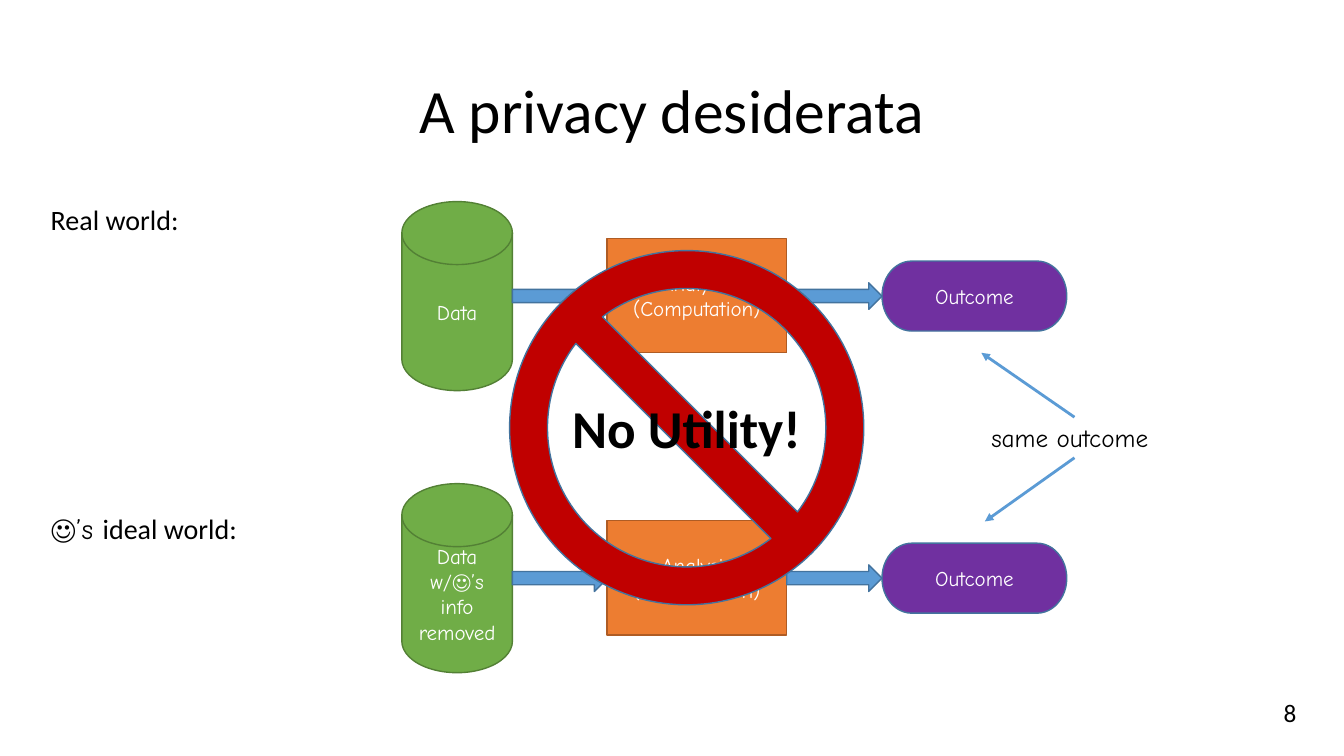
from lxml.etree import SubElement
from pptx import Presentation
from pptx.dml.color import RGBColor
from pptx.enum.shapes import MSO_CONNECTOR, MSO_SHAPE
from pptx.enum.text import MSO_ANCHOR, MSO_AUTO_SIZE, PP_ALIGN
from pptx.oxml.ns import qn
from pptx.util import Pt

BLACK = RGBColor(0x00, 0x00, 0x00)
WHITE = RGBColor(0xFF, 0xFF, 0xFF)
GREEN = RGBColor(0x70, 0xAD, 0x47)
DARK_GREEN = RGBColor(0x53, 0x80, 0x35)
ORANGE = RGBColor(0xED, 0x7D, 0x31)
DARK_ORANGE = RGBColor(0xAF, 0x5C, 0x24)
PURPLE = RGBColor(0x70, 0x30, 0xA0)
BLUE = RGBColor(0x5B, 0x9B, 0xD5)
DARK_BLUE = RGBColor(0x43, 0x73, 0x9E)
RED = RGBColor(0xC0, 0x00, 0x00)
PLAIN, COMIC = "Calibri", "Comic Neue"


def write(paragraph, text, font=PLAIN, size=18, color=BLACK, bold=False,
          align=PP_ALIGN.LEFT, spacing=1.0, before=0):
    """Add a formatted run to a paragraph and set the paragraph's format."""
    paragraph.alignment = align
    paragraph.line_spacing = spacing
    paragraph.space_before = Pt(before)
    run = paragraph.add_run()
    run.text = text
    run.font.name = font
    run.font.size = Pt(size)
    run.font.bold = bold
    run.font.color.rgb = color


def place(placeholder, left, top, width, height, anchor):
    """Move a placeholder and return its text frame."""
    placeholder.left, placeholder.top = Pt(left), Pt(top)
    placeholder.width, placeholder.height = Pt(width), Pt(height)
    frame = placeholder.text_frame
    frame.auto_size = MSO_AUTO_SIZE.NONE
    frame.vertical_anchor = anchor
    return frame


def add_figure(slide, kind, left, top, width, height, fill, line, lines=(),
               wrap=True, **text_format):
    """Add a filled preset shape with centred lines of text."""
    figure = slide.shapes.add_shape(kind, Pt(left), Pt(top), Pt(width), Pt(height))
    figure.shadow.inherit = False
    figure.fill.solid()
    figure.fill.fore_color.rgb = fill
    figure.line.color.rgb = line
    figure.line.width = Pt(1)
    frame = figure.text_frame
    frame.word_wrap = wrap
    frame.vertical_anchor = MSO_ANCHOR.MIDDLE
    for index, text in enumerate(lines):
        paragraph = frame.add_paragraph() if index else frame.paragraphs[0]
        write(paragraph, text, align=PP_ALIGN.CENTER, **text_format)
    return figure


def add_label(slide, text, left, top, width, height, wrap=True, **text_format):
    """Add a one-line text box."""
    label = slide.shapes.add_textbox(Pt(left), Pt(top), Pt(width), Pt(height))
    label.text_frame.word_wrap = wrap
    label.text_frame.auto_size = MSO_AUTO_SIZE.SHAPE_TO_FIT_TEXT
    write(label.text_frame.paragraphs[0], text, **text_format)
    return label


def add_pointer(slide, source, side, x, y):
    """Draw an arrow from the side of a shape to a point."""
    pointer = slide.shapes.add_connector(MSO_CONNECTOR.STRAIGHT, 0, 0, Pt(x), Pt(y))
    pointer.begin_connect(source, side)
    pointer.line.color.rgb = BLUE
    pointer.line.width = Pt(2)
    SubElement(pointer.line._get_or_add_ln(), qn("a:tailEnd"), type="triangle")
    SubElement(pointer._element.spPr, qn("a:effectLst"))


def add_pipeline(slide, top, data_lines):
    """Draw one row from data through analysis to outcome."""
    caption = {"font": COMIC, "size": 15, "color": WHITE}
    add_figure(slide, MSO_SHAPE.FLOWCHART_MAGNETIC_DISK, 287, top, 79, 135,
               GREEN, DARK_GREEN, data_lines, **caption)
    add_figure(slide, MSO_SHAPE.FLOWCHART_PROCESS, 433.5, top + 26.5, 128.5, 81.5,
               ORANGE, DARK_ORANGE, ["Analysis", "(Computation)"], **caption)
    add_figure(slide, MSO_SHAPE.FLOWCHART_TERMINATOR, 630, top + 42.5, 132, 50,
               PURPLE, DARK_BLUE, ["Outcome"], **caption)
    for left in (366, 562):
        add_figure(slide, MSO_SHAPE.RIGHT_ARROW, left, top + 58, 68, 19,
                   BLUE, DARK_BLUE)


def add_worlds(body):
    """Fill the body placeholder with the two world headings."""
    frame = place(body, 29, 144, 894, 373, MSO_ANCHOR.TOP)
    real, ideal = frame.paragraphs[0], frame.add_paragraph()
    for paragraph in (real, ideal):
        properties = paragraph._p.get_or_add_pPr()
        properties.set("marL", "0")
        properties.set("indent", "0")
        SubElement(properties, qn("a:buNone"))
    write(real, "Real world:", size=20, spacing=0.9)
    gap = {"size": 20, "spacing": 0.9, "before": 199}
    write(ideal, "☺’s ", font=COMIC, **gap)
    write(ideal, "ideal world:", **gap)


def main():
    """Build the slide and save it."""
    deck = Presentation()
    deck.slide_width, deck.slide_height = Pt(960), Pt(540)
    slide = deck.slides.add_slide(deck.slide_layouts[1])
    add_worlds(slide.placeholders[1])
    add_pipeline(slide, 144, ["Data"])
    add_pipeline(slide, 345.5, ["Data", "w/☺’s info removed"])
    title = place(slide.shapes.title, 66, 29, 828, 104, MSO_ANCHOR.MIDDLE)
    write(title.paragraphs[0], "A privacy desiderata", size=44,
          align=PP_ALIGN.CENTER, spacing=0.9)
    same = add_label(slide, "same outcome", 701, 298, 133, 29, wrap=False, font=COMIC)
    add_pointer(slide, same, 0, 701, 252)
    add_pointer(slide, same, 2, 703.5, 372.5)
    ban = add_figure(slide, MSO_SHAPE.NO_SYMBOL, 364, 179, 253, 253, RED, DARK_BLUE,
                     ["No Utility!"], wrap=False, size=38, bold=True)
    ban.adjustments[0] = 0.107
    add_label(slide, "8", 899, 494.5, 45, 29, align=PP_ALIGN.CENTER)
    deck.save("out.pptx")


if __name__ == "__main__":
    main()
